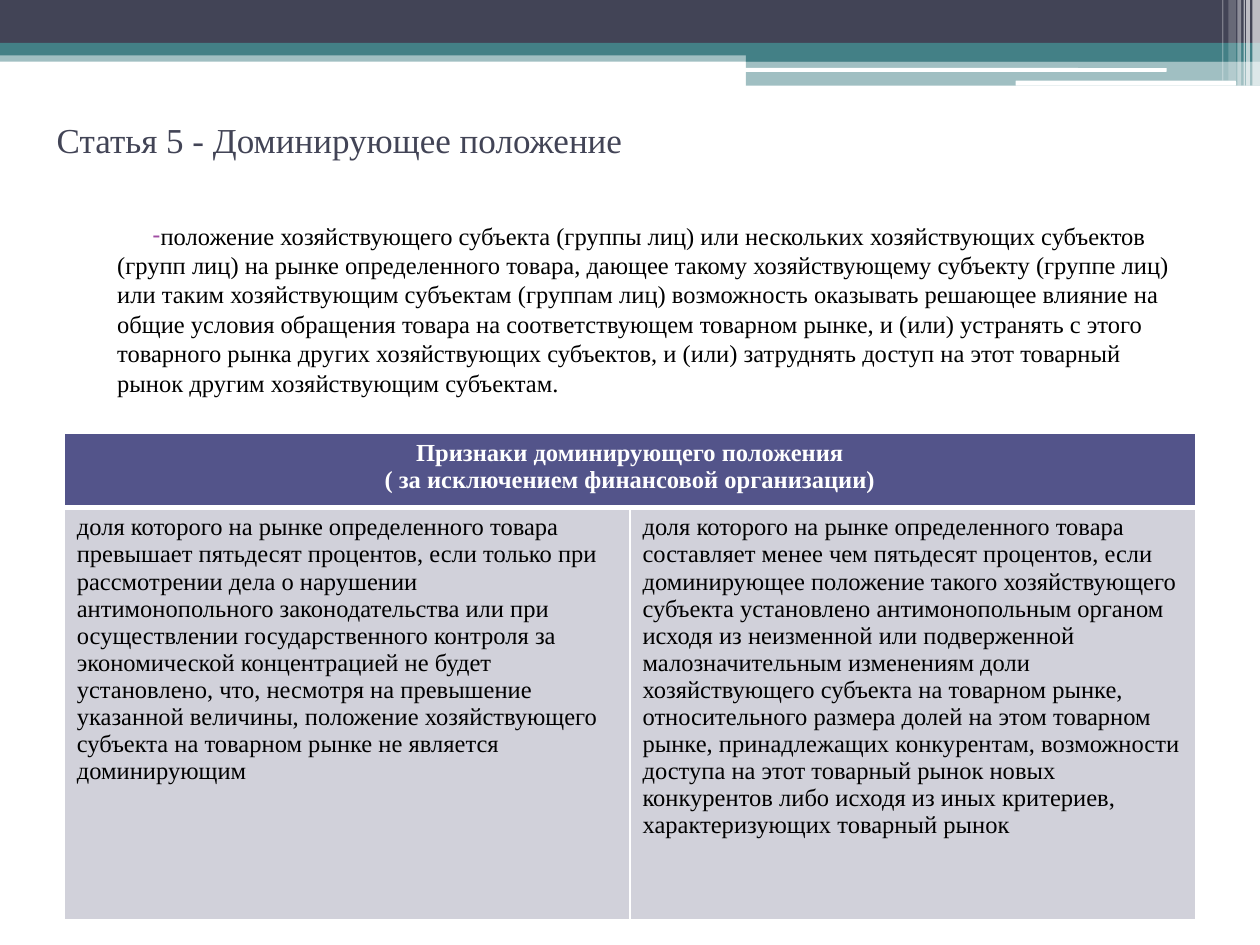
from lxml import etree
from pptx import Presentation
from pptx.dml.color import RGBColor
from pptx.enum.shapes import MSO_SHAPE
from pptx.enum.text import MSO_ANCHOR, MSO_AUTO_SIZE, PP_ALIGN
from pptx.oxml.ns import qn
from pptx.util import Inches, Pt

RECTANGLE = MSO_SHAPE.RECTANGLE
ROUNDED = MSO_SHAPE.ROUNDED_RECTANGLE
MIDDLE, TOP = MSO_ANCHOR.MIDDLE, MSO_ANCHOR.TOP
LEFT, CENTER = PP_ALIGN.LEFT, PP_ALIGN.CENTER
NO_FIT = MSO_AUTO_SIZE.NONE

FONT = "Times New Roman"
NAVY, TEAL, WHITE, BLACK = "424456", "438086", "FFFFFF", "000000"
VIOLET, LILAC, PURPLE = "53548A", "D1D1DA", "A04DA3"

BANDS = [
    (0, 0.4, 10, 0.09, TEAL, 50),
    (0, 0, 10, 0.34, NAVY, 100),
    (0, 0.34, 10, 0.1, TEAL, 100),
    (5.92, 0.39, 4.08, 0.1, TEAL, 100),
    (5.92, 0.48, 4.08, 0.2, TEAL, 50),
]
WHITE_BARS = [(5.91, 0.54, 3.35, 0.03), (8.06, 0.64, 1.75, 0.04)]
STRIPES = [
    (9.94, 0.06, 0.68, 65),
    (9.89, 0.03, 0.68, 65),
    (9.87, 0.01, 0.68, 60),
    (9.82, 0.03, 0.68, 40),
    (9.75, 0.06, 0.64, 20),
    (9.7, 0.01, 0.64, 30),
]

TITLE = "Статья 5 - Доминирующее положение"
DEFINITION = (
    "положение хозяйствующего субъекта (группы лиц) или нескольких хозяйствующих "
    "субъектов (групп лиц) на рынке определенного товара, дающее такому "
    "хозяйствующему субъекту (группе лиц) или таким хозяйствующим субъектам "
    "(группам лиц) возможность оказывать решающее влияние на общие условия "
    "обращения товара на соответствующем товарном рынке, и (или) устранять с этого "
    "товарного рынка других хозяйствующих субъектов, и (или) затруднять доступ на "
    "этот товарный рынок другим хозяйствующим субъектам. "
)
HEADING = "Признаки доминирующего положения\n( за исключением финансовой организации)"
CRITERIA = [
    "доля которого на рынке определенного товара превышает пятьдесят процентов, "
    "если только при рассмотрении дела о нарушении антимонопольного "
    "законодательства или при осуществлении государственного контроля за "
    "экономической концентрацией не будет установлено, что, несмотря на превышение "
    "указанной величины, положение хозяйствующего субъекта на товарном рынке не "
    "является доминирующим",
    "доля которого на рынке определенного товара составляет менее чем пятьдесят "
    "процентов, если доминирующее положение такого хозяйствующего субъекта "
    "установлено антимонопольным органом исходя из неизменной или подверженной "
    "малозначительным изменениям доли хозяйствующего субъекта на товарном рынке, "
    "относительного размера долей на этом товарном рынке, принадлежащих "
    "конкурентам, возможности доступа на этот товарный рынок новых конкурентов "
    "либо исходя из иных критериев, характеризующих товарный рынок",
]


def paint(fill, color, opacity=100):
    fill.solid()
    fill.fore_color.rgb = RGBColor.from_string(color)
    if opacity < 100:
        tint = fill._xPr.find(qn("a:solidFill"))[0]
        etree.SubElement(tint, qn("a:alpha"), val=str(opacity * 1000))


def add_band(page, left, top, width, height, color, opacity=100, kind=RECTANGLE):
    band = page.shapes.add_shape(
        kind, Inches(left), Inches(top), Inches(width), Inches(height))
    band.shadow.inherit = False
    band.line.fill.background()
    paint(band.fill, color, opacity)


def write(frame, text, size, color, align=LEFT, bold=False):
    frame.text = text
    for para in frame.paragraphs:
        para.alignment = align
        for span in para.runs:
            span.font.name = FONT
            span.font.size = Pt(size)
            span.font.bold = bold
            span.font.color.rgb = RGBColor.from_string(color)


def place(holder, left, top, width, height, anchor):
    holder.left, holder.top = Inches(left), Inches(top)
    holder.width, holder.height = Inches(width), Inches(height)
    holder.text_frame.auto_size = NO_FIT
    holder.text_frame.vertical_anchor = anchor
    holder._element.getparent().append(holder._element)


def set_bullet(para, mark, color, margin, indent):
    props = para._p.get_or_add_pPr()
    props.set("marL", str(Inches(margin)))
    props.set("indent", str(Inches(indent)))
    tint = etree.SubElement(props, qn("a:buClr"))
    etree.SubElement(tint, qn("a:srgbClr"), val=color)
    etree.SubElement(props, qn("a:buChar"), char=mark)


def set_borders(cell, bottom):
    props = cell._tc.get_or_add_tcPr()
    widths = {"a:lnL": 1, "a:lnR": 1, "a:lnT": 1, "a:lnB": bottom}
    for place_index, (tag, width) in enumerate(widths.items()):
        line = etree.Element(qn(tag), w=str(Pt(width)))
        solid = etree.SubElement(line, qn("a:solidFill"))
        etree.SubElement(solid, qn("a:srgbClr"), val=WHITE)
        props.insert(place_index, line)


def add_criteria_table(page):
    table = page.shapes.add_table(
        2, 2, Inches(0.51), Inches(3.44), Inches(8.98), Inches(3.86)).table
    for row, height in zip(table.rows, (0.59, 3.27)):
        row.height = Inches(height)
    table.cell(0, 0).merge(table.cell(0, 1))
    for column in range(2):
        for row, color, bottom in ((0, VIOLET, 3), (1, LILAC, 1)):
            cell = table.cell(row, column)
            paint(cell.fill, color)
            set_borders(cell, bottom)
        write(table.cell(1, column).text_frame, CRITERIA[column], 14, BLACK)
    write(table.cell(0, 0).text_frame, HEADING, 14, WHITE, CENTER, True)


def add_header(page):
    for band in BANDS:
        add_band(page, *band)
    for bar in WHITE_BARS:
        add_band(page, *bar, WHITE, kind=ROUNDED)
    for left, width, height, opacity in STRIPES:
        add_band(page, left, 0, width, height, WHITE, opacity)


def main():
    deck = Presentation()
    deck.slide_width, deck.slide_height = Inches(10), Inches(7.5)
    page = deck.slides.add_slide(deck.slide_layouts[1])
    paint(page.background.fill, WHITE)
    add_header(page)

    title, body = page.shapes.title, page.placeholders[1]
    place(title, 0.35, 0.52, 9, 1.17, MIDDLE)
    write(title.text_frame, TITLE, 20, NAVY)

    place(body, 0.43, 1.7, 9, 1.5, TOP)
    write(body.text_frame, DEFINITION, 14, BLACK)
    para = body.text_frame.paragraphs[0]
    para.space_before = Pt(3)
    set_bullet(para, "-", PURPLE, 0.4, 0.28)

    add_criteria_table(page)
    deck.save("out.pptx")


if __name__ == "__main__":
    main()
